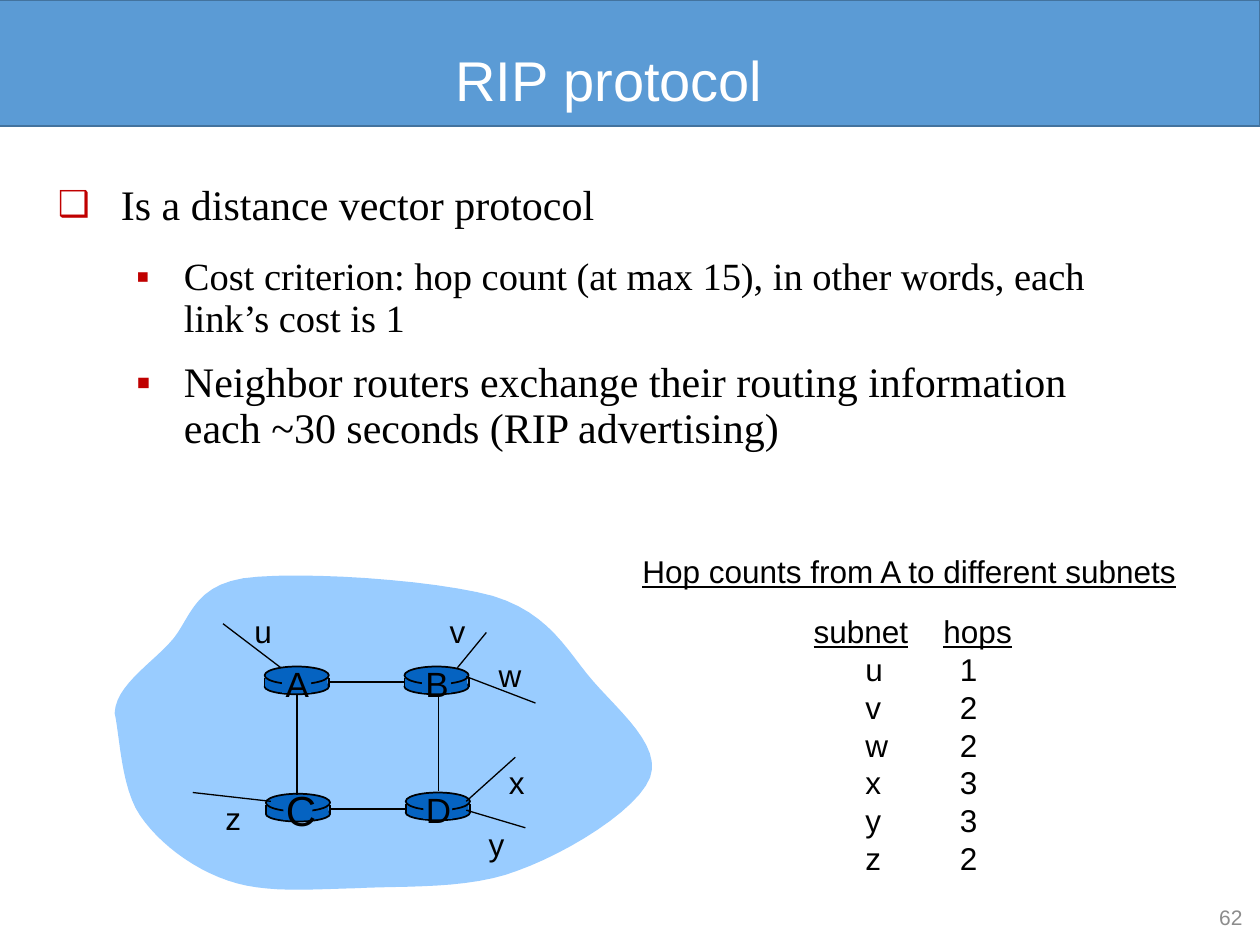
from lxml import etree
from pptx import Presentation
from pptx.dml.color import RGBColor
from pptx.enum.shapes import MSO_CONNECTOR, MSO_SHAPE
from pptx.enum.text import MSO_ANCHOR, MSO_AUTO_SIZE, PP_ALIGN
from pptx.oxml.ns import qn
from pptx.util import Inches, Pt

RECT, OVAL, STRAIGHT = MSO_SHAPE.RECTANGLE, MSO_SHAPE.OVAL, MSO_CONNECTOR.STRAIGHT
LEFT, CENTER, RIGHT = PP_ALIGN.LEFT, PP_ALIGN.CENTER, PP_ALIGN.RIGHT
TOP, MIDDLE = MSO_ANCHOR.TOP, MSO_ANCHOR.MIDDLE
NO_AUTOFIT = MSO_AUTO_SIZE.NONE
rgb = RGBColor.from_string
BLACK, ROUTER_BLUE, BULLET_RED = "000000", "0563C1", "C00000"

deck = Presentation()
deck.slide_width, deck.slide_height = Inches(10), Inches(7.5)
slide = deck.slides.add_slide(deck.slide_layouts[1])
shapes = slide.shapes


def add_span(para, text, size, color=BLACK, font="Arial", underline=None):
    span = para.add_run()
    span.text = text
    span.font.size, span.font.name = Pt(size), font
    span.font.color.rgb = rgb(color)
    span.font.underline = underline


def add_part(kind, left, top, width, height, fill, line=None):
    part = shapes.add_shape(kind, *map(Inches, (left, top, width, height)))
    part.shadow.inherit = False
    part.fill.solid()
    part.fill.fore_color.rgb = rgb(fill)
    if line:
        part.line.color.rgb, part.line.width = rgb(line), Pt(1)
    else:
        part.line.fill.background()
    return part


# Banner, placed behind the title
banner = add_part(RECT, -0.02, 0, 10.02, 1, "5B9BD5", "43739E")
shapes._spTree.insert(2, banner._element)

# Title
title = shapes.title
title.left, title.top, title.width, title.height = map(Inches, (0.58, 0.17, 8.51, 0.98))
title.text_frame.auto_size = NO_AUTOFIT
title.text_frame.vertical_anchor = MIDDLE
para = title.text_frame.paragraphs[0]
para.alignment, para.line_spacing = CENTER, 0.9
add_span(para, "RIP protocol", 32, "FFFFFF")

# Bulleted list: text, size, level
bullets = [
    ("Is a distance vector protocol", 24, 0),
    ("Cost criterion: hop count (at max 15), in other words, each link’s cost is 1", 22, 1),
    ("Neighbor routers exchange their routing information each ~30 seconds (RIP advertising)", 24, 1),
]
# Per level: bullet, size in percent, left margin, hanging indent, spacing
levels = [("❑", 85, 0.5, -0.5, 10), ("▪", 100, 1, -0.38, 6)]
body = slide.placeholders[1]
body.left, body.top, body.width, body.height = map(Inches, (0.36, 1.41, 8.78, 2.5))
body.text_frame.auto_size = NO_AUTOFIT
for index, (text, size, level) in enumerate(bullets):
    para = body.text_frame.add_paragraph() if index else body.text_frame.paragraphs[0]
    mark, percent, margin, indent, gap = levels[level]
    para.level, para.line_spacing = level, 0.9
    para.space_before = para.space_after = Pt(gap)
    add_span(para, text, size, font="Times New Roman")
    props = para._p.get_or_add_pPr()
    props.set("marL", str(Inches(margin)))
    props.set("indent", str(Inches(indent)))
    bullet_color = etree.SubElement(props, qn("a:buClr"))
    etree.SubElement(bullet_color, qn("a:srgbClr"), val=BULLET_RED)
    etree.SubElement(props, qn("a:buSzPct"), val=str(percent * 1000))
    etree.SubElement(props, qn("a:buFont"), typeface="Arial")
    etree.SubElement(props, qn("a:buChar"), char=mark)

# Network cloud: each curve has two control points and an end point
cloud_start = (0.91, 5.66)
cloud_curves = [
    ((0.92, 5.45), (1.17, 5.29), (1.34, 5.11)),
    ((1.51, 4.94), (1.51, 4.66), (1.93, 4.59)),
    ((2.36, 4.53), (3.44, 4.6), (3.91, 4.73)),
    ((4.37, 4.87), (4.5, 5.17), (4.71, 5.41)),
    ((4.92, 5.65), (5.25, 5.92), (5.16, 6.17)),
    ((5.06, 6.43), (4.5, 6.77), (4.11, 6.91)),
    ((3.73, 7.06), (3.21, 7.03), (2.83, 7.05)),
    ((2.44, 7.06), (2.1, 7.09), (1.81, 6.99)),
    ((1.52, 6.89), (1.26, 6.69), (1.11, 6.47)),
    ((0.96, 6.25), (0.95, 5.83), (0.91, 5.66)),
]
STEPS = 12
outline = []
curve_start = cloud_start
for curve in cloud_curves:
    for step in range(1, STEPS + 1):
        t = step / STEPS
        weights = ((1 - t) ** 3, 3 * t * (1 - t) ** 2, 3 * t * t * (1 - t), t ** 3)
        corners = (curve_start, *curve)
        outline.append([Inches(sum(w * c[axis] for w, c in zip(weights, corners))) for axis in (0, 1)])
    curve_start = curve[-1]
builder = shapes.build_freeform(*map(Inches, cloud_start))
builder.add_line_segments(outline)
cloud = builder.convert_to_shape()
cloud.shadow.inherit = False
cloud.fill.solid()
cloud.fill.fore_color.rgb = rgb("99CCFF")
cloud.line.fill.background()

# Lines: router sides are drawn with each router, links and subnets after them
routers = [("A", 2.1, 5.29, 20), ("B", 3.21, 5.29, 20), ("C", 2.11, 6.3, 24), ("D", 3.22, 6.29, 20)]
links = [(3.48, 5.52, 3.48, 6.28), (2.36, 5.52, 2.36, 6.31),
         (2.63, 6.42, 3.22, 6.42), (2.62, 5.41, 3.21, 5.41)]
subnet_lines = [(3.7, 5.37, 4.25, 5.58), (3.63, 5.3, 3.86, 5.02), (3.7, 6.36, 4.09, 6.01),
                (3.7, 6.43, 4.17, 6.57), (2.23, 5.3, 1.77, 4.95), (2.15, 6.36, 1.53, 6.29)]
lines = [(link, 1) for link in links] + [(ends, 0.75) for ends in subnet_lines]

# Router drums
for name, left, top, size in routers:
    add_part(OVAL, left, top + 0.1, 0.51, 0.12, ROUTER_BLUE, BLACK)
    add_part(RECT, left, top + 0.09, 0.5, 0.07, ROUTER_BLUE)
    add_part(OVAL, left, top, 0.51, 0.14, ROUTER_BLUE, BLACK)
    lines += [((x, top + 0.09, x, top + 0.16), 1) for x in (left, left + 0.51)]

for ends, weight in lines:
    connector = shapes.add_connector(STRAIGHT, *map(Inches, ends))
    connector.line.color.rgb, connector.line.width = rgb(BLACK), Pt(weight)
    etree.SubElement(connector._element.spPr, qn("a:effectLst"))

# Plates behind the router names
for name, left, top, size in routers:
    add_part(RECT, left + 0.14, top + 0.02, 0.23, 0.19, ROUTER_BLUE)

# Single-line texts: text, left, top, width, height, size, alignment, anchor, color, underline
labels = [(name, left + 0.06, top + 0.13 - size * 0.0106, 0.4, size * 0.0212, size, CENTER, TOP, BLACK, None)
          for name, left, top, size in routers]
subnet_names = [("u", 1.92, 4.81), ("v", 3.47, 4.81), ("w", 3.86, 5.16),
                ("x", 3.94, 6.01), ("y", 3.78, 6.5), ("z", 1.69, 6.29)]
labels += [(name, left, top, 0.34, 0.4, 18, LEFT, TOP, BLACK, None) for name, left, top in subnet_names]
labels += [
    ("Hop counts from A to different subnets", 5, 4.33, 4.48, 0.4, 18, LEFT, TOP, BLACK, True),
    ("62", 9.24, 7.1, 0.72, 0.36, 12, RIGHT, MIDDLE, "8C8C8C", None),
]
for text, left, top, width, height, size, align, anchor, color, underline in labels:
    box = shapes.add_textbox(*map(Inches, (left, top, width, height)))
    box.text_frame.word_wrap = False
    box.text_frame.vertical_anchor = anchor
    para = box.text_frame.paragraphs[0]
    para.alignment = align
    add_span(para, text, size, color, underline=underline)

# Hop counts, lined up with tab stops
hop_counts = [("u", 1), ("v", 2), ("w", 2), ("x", 3), ("y", 3), ("z", 2)]
hop_rows = [([("subnet", True), ("\t", None), ("hops", True)], [1.03])]
hop_rows += [([(f"\t{name}\t{hops}", None)], [0.41, 1.16]) for name, hops in hop_counts]
hop_box = shapes.add_textbox(*map(Inches, (6.36, 4.81, 1.9, 2.5)))
hop_box.text_frame.word_wrap = True
for index, (spans, stops) in enumerate(hop_rows):
    para = hop_box.text_frame.add_paragraph() if index else hop_box.text_frame.paragraphs[0]
    tabs = etree.SubElement(para._p.get_or_add_pPr(), qn("a:tabLst"))
    for stop in stops:
        etree.SubElement(tabs, qn("a:tab"), pos=str(Inches(stop)), algn="l")
    for text, underline in spans:
        add_span(para, text, 18, underline=underline)

deck.save("out.pptx")
